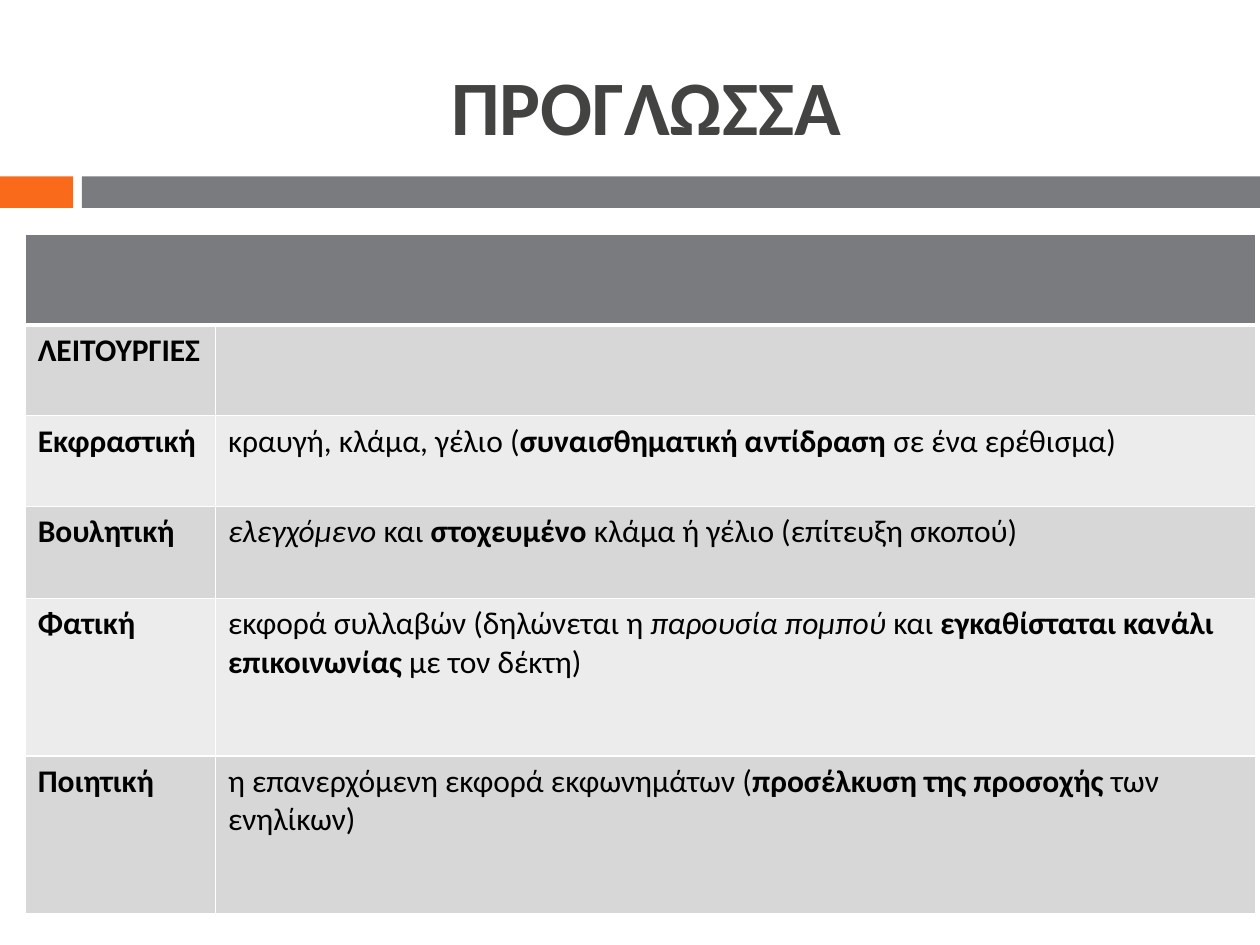
from lxml import etree
from pptx import Presentation
from pptx import util as u
from pptx.dml.color import RGBColor
from pptx.enum import shapes, text
from pptx.oxml.ns import qn

WIDTH, HEIGHT = u.Inches(10), u.Inches(7.5)
GREY, ORANGE, WHITE = "797B7E", "F96A1B", "FFFFFF"
BANDS = ["D7D7D8", "ECECEC"]


def color(target, value):
    """Give a fill or a font a solid colour."""
    if hasattr(target, "solid"):
        target.solid()
        target.fore_color.rgb = RGBColor.from_string(value)
    else:
        target.color.rgb = RGBColor.from_string(value)


def write(frame, runs, size=18, ink="000000", align=text.PP_ALIGN.LEFT):
    """Fill a text frame with (wording, style) runs; style b is bold, i italic."""
    frame.word_wrap = True
    paragraph = frame.paragraphs[0]
    paragraph.alignment = align
    for wording, style in runs:
        run = paragraph.add_run()
        run.text = wording
        run.font.name, run.font.size = "Calibri", u.Pt(size)
        run.font.bold, run.font.italic = "b" in style, "i" in style
        color(run.font, ink)


presentation = Presentation()
presentation.slide_width, presentation.slide_height = WIDTH, HEIGHT
slide = presentation.slides.add_slide(presentation.slide_layouts[6])

# Divider bar: short accent and long grey strip
for left, width, fill in [(0, 0.058, ORANGE), (0.065, 0.935, GREY)]:
    shape = slide.shapes.add_shape(
        shapes.MSO_SHAPE.RECTANGLE, int(WIDTH * left), u.Inches(1.4),
        int(WIDTH * width), u.Inches(0.25))
    shape.shadow.inherit = False
    color(shape.fill, fill)
    shape.line.fill.background()

# Title
title = slide.shapes.add_textbox(
    u.Inches(0.67), u.Inches(0.29), u.Inches(8.92), u.Inches(1.08))
title.text_frame.vertical_anchor = text.MSO_ANCHOR.MIDDLE
write(title.text_frame, [("ΠΡΟΓΛΩΣΣΑ", "b")], size=44, ink="434342",
      align=text.PP_ALIGN.CENTER)

# Table of functions: label, then the runs of its description
functions = [
    ("ΛΕΙΤΟΥΡΓΙΕΣ", []),
    ("Εκφραστική", [("κραυγή, κλάμα, γέλιο (", ""),
                    ("συναισθηματική αντίδραση ", "b"),
                    ("σε ένα ερέθισμα)", "")]),
    ("Βουλητική", [("ελεγχόμενο", "i"), (" και ", ""), ("στοχευμένο", "b"),
                   (" κλάμα ή γέλιο (επίτευξη σκοπού)", "")]),
    ("Φατική", [("εκφορά συλλαβών (δηλώνεται η ", ""),
                ("παρουσία πομπού ", "i"), ("και ", ""),
                ("εγκαθίσταται κανάλι επικοινωνίας", "b"),
                (" με τον δέκτη)", "")]),
    ("Ποιητική", [("η επανερχόμενη εκφορά εκφωνημάτων (", ""),
                  ("προσέλκυση της προσοχής ", "b"),
                  ("των ενηλίκων)", "")]),
]
columns = [1.51, 8.26]
rows = [0.72, 0.72, 0.72, 0.73, 1.25, 1.25]
table = slide.shapes.add_table(
    len(rows), len(columns), u.Inches(0.2), u.Inches(1.86),
    u.Inches(sum(columns)), u.Inches(sum(rows))).table
for column, width in zip(table.columns, columns):
    column.width = u.Inches(width)
for row, height in zip(table.rows, rows):
    row.height = u.Inches(height)
table.cell(0, 0).merge(table.cell(0, 1))

for number, (label, description) in enumerate(functions, start=1):
    write(table.cell(number, 0).text_frame, [(label, "b")])
    write(table.cell(number, 1).text_frame, description)

# Cell fills and white rules, thicker under the header
for number, row in enumerate(table.rows):
    for cell in row.cells:
        properties = cell._tc.get_or_add_tcPr()
        for side in ("lnL", "lnR", "lnT", "lnB"):
            thick = (number, side) in [(0, "lnB"), (1, "lnT")]
            line = etree.SubElement(properties, qn("a:" + side),
                                    w=str(u.Pt(3 if thick else 1)))
            fill = etree.SubElement(line, qn("a:solidFill"))
            etree.SubElement(fill, qn("a:srgbClr"), val=WHITE)
        color(cell.fill, BANDS[(number - 1) % 2] if number else GREY)

presentation.save("out.pptx")
